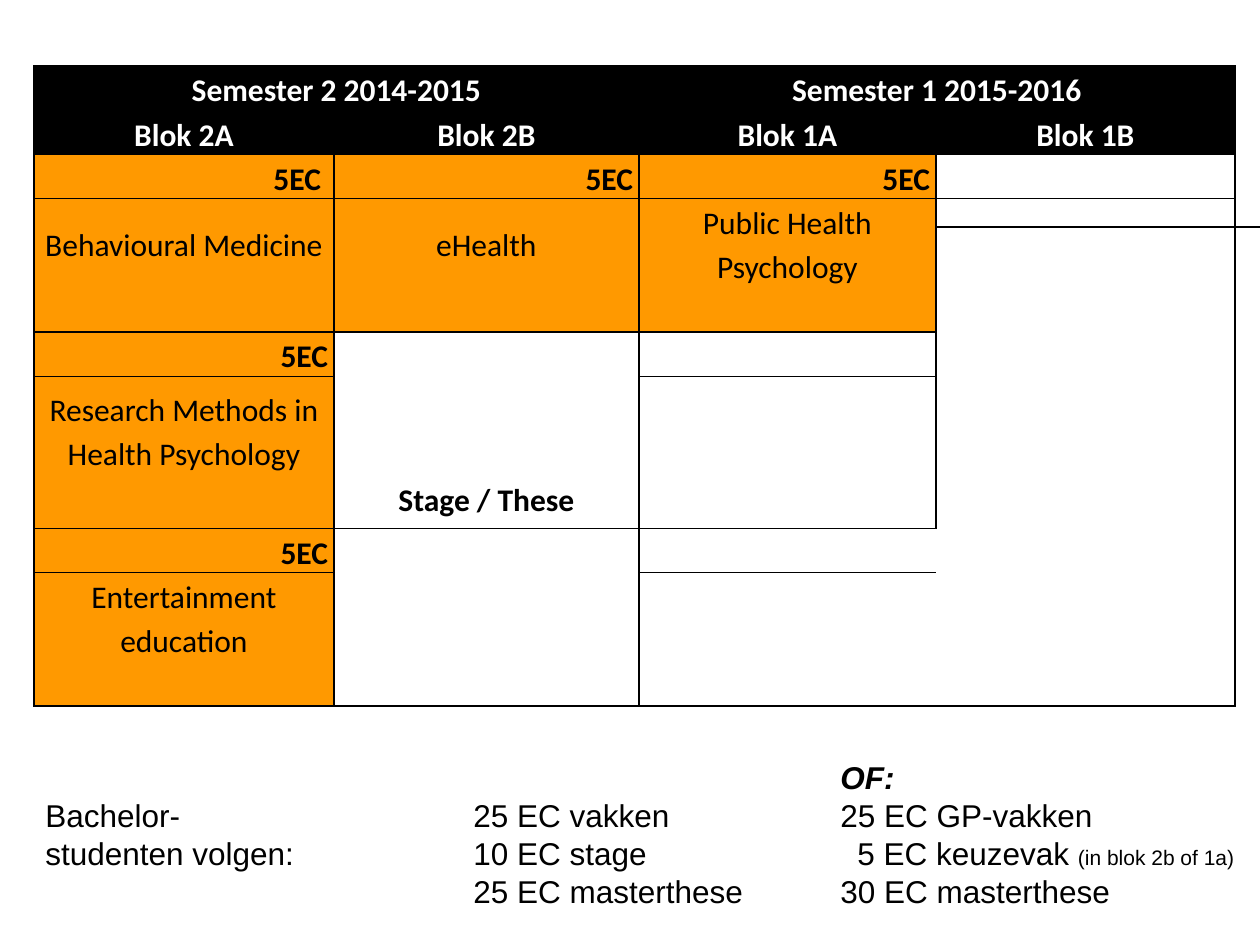
from dataclasses import dataclass

from lxml.etree import SubElement
from pptx import Presentation
from pptx.dml.color import RGBColor
from pptx.enum.shapes import MSO_CONNECTOR as Connector
from pptx.enum.text import MSO_ANCHOR as Anchor, MSO_AUTO_SIZE as AutoSize, PP_ALIGN as Align
from pptx.oxml.ns import qn
from pptx.util import Emu, Pt

PX_PER_INCH = 126
NO_STYLE_NO_GRID = "{2D5ABB26-0587-4C30-8999-92F81FD0307C}"


@dataclass(frozen=True)
class Theme:
    ink: str = "000000"
    paper: str = "FFFFFF"
    course: str = "FF9900"
    table_font: str = "Calibri"
    note_font: str = "Arial"
    body: int = 18
    small: int = 12
    line: int = 1


def px(value):
    return Emu(round(value * 914400 / PX_PER_INCH))


class SlideBuilder:
    def __init__(self, slide, theme):
        self.slide = slide
        self.theme = theme

    def run(self, paragraph, text, font, color=None, size=None, bold=False, italic=False):
        run = paragraph.add_run()
        run.text = text
        run.font.name = font
        run.font.size = Pt(size or self.theme.body)
        run.font.bold = bold
        run.font.italic = italic
        run.font.color.rgb = RGBColor.from_string(color or self.theme.ink)

    def line(self, x1, y1, x2, y2):
        line = self.slide.shapes.add_connector(
            Connector.STRAIGHT, px(x1), px(y1), px(x2), px(y2))
        line.line.color.rgb = RGBColor.from_string(self.theme.ink)
        line.line.width = Pt(self.theme.line)
        SubElement(line._element.spPr, qn("a:effectLst"))

    def table(self, left, top, widths, heights):
        frame = self.slide.shapes.add_table(
            len(heights), len(widths), px(left), px(top), px(sum(widths)), px(sum(heights)))
        table = frame.table
        table._tbl.tblPr.find(qn("a:tableStyleId")).text = NO_STYLE_NO_GRID
        for column, width in zip(table.columns, widths):
            column.width = px(width)
        for row, height in zip(table.rows, heights):
            row.height = px(height)
        for cell in table.iter_cells():
            cell.margin_left = cell.margin_right = px(6)
            cell.margin_top = cell.margin_bottom = 0
        return table

    def block(self, table, row, column, rows=1, columns=1, edges="LRTB", fill=None, merge=False):
        """Outline and fill a block of cells; return its first cell."""
        first = table.cell(row, column)
        if merge:
            first.merge(table.cell(row + rows - 1, column + columns - 1))
        for i in range(rows):
            for j in range(columns):
                cell = table.cell(row + i, column + j)
                on_edge = {"L": j == 0, "R": j == columns - 1,
                           "T": i == 0, "B": i == rows - 1}
                whole = merge and i == j == 0
                for side in edges:
                    if on_edge[side] or whole:
                        self.border(cell, side)
                if fill:
                    cell.fill.solid()
                    cell.fill.fore_color.rgb = RGBColor.from_string(fill)
                else:
                    cell.fill.background()
        return first

    def border(self, cell, side):
        line = SubElement(cell._tc.get_or_add_tcPr(), qn(f"a:ln{side}"),
                          w=str(Pt(self.theme.line)))
        color = SubElement(SubElement(line, qn("a:solidFill")), qn("a:srgbClr"))
        color.set("val", self.theme.ink)

    def cell_text(self, cell, text, align=Align.CENTER, anchor=Anchor.MIDDLE,
                  color=None, bold=True):
        cell.vertical_anchor = anchor
        paragraph = cell.text_frame.paragraphs[0]
        paragraph.alignment = align
        paragraph.line_spacing = 1.15
        self.run(paragraph, text, self.theme.table_font, color, bold=bold)

    def note(self, left, top, width, height, lines):
        """Each line is an indent followed by (text, run options) pairs."""
        box = self.slide.shapes.add_textbox(px(left), px(top), px(width), px(height))
        frame = box.text_frame
        frame.word_wrap = False
        frame.auto_size = AutoSize.SHAPE_TO_FIT_TEXT
        for index, (indent, *runs) in enumerate(lines):
            paragraph = frame.add_paragraph() if index else frame.paragraphs[0]
            if indent:
                paragraph._p.get_or_add_pPr().set("marL", str(px(indent)))
            for text, options in runs:
                self.run(paragraph, text, self.theme.note_font, **options)


def main():
    theme = Theme()
    presentation = Presentation()
    presentation.slide_width, presentation.slide_height = px(1260), px(945)
    slide = presentation.slides.add_slide(presentation.slide_layouts[6])
    builder = SlideBuilder(slide, theme)

    # Rule behind the timetable
    builder.line(149, 227, 1260, 227)

    # Timetable: two header rows, then three rows each for credits, course and space
    heights = [44, 44] + [44, 88, 45] + [44, 107, 45] + [44, 88, 45]
    table = builder.table(34, 66, [300, 305, 297, 299], heights)

    # Header
    for column, semester in ((0, "Semester 2 2014-2015"), (2, "Semester 1 2015-2016")):
        cell = builder.block(table, 0, column, columns=2, fill=theme.ink, merge=True)
        builder.cell_text(cell, semester, anchor=Anchor.BOTTOM, color=theme.paper)
    for column, name in enumerate(("Blok 2A", "Blok 2B", "Blok 1A", "Blok 1B")):
        cell = builder.block(table, 1, column, fill=theme.ink)
        builder.cell_text(cell, name, color=theme.paper)

    # Courses
    courses = [
        (2, 0, "Behavioural Medicine"),
        (2, 1, "eHealth"),
        (2, 2, "Public Health Psychology"),
        (5, 0, "Research Methods in Health Psychology"),
        (8, 0, "Entertainment education"),
    ]
    for row, column, course in courses:
        credit = builder.block(table, row, column, rows=3, fill=theme.course)
        builder.cell_text(credit, "5EC", Align.RIGHT, Anchor.BOTTOM)
        builder.cell_text(table.cell(row + 1, column), course, bold=False)
    table.cell(2, 0).margin_right = px(13)

    # Internship and thesis area
    stage = builder.block(table, 5, 1, rows=3, edges="LRT", merge=True)
    builder.cell_text(stage, "Stage / These", anchor=Anchor.BOTTOM)
    stage.margin_bottom = px(8)
    builder.block(table, 5, 2, rows=3)
    builder.block(table, 8, 1, rows=3, edges="LB", merge=True)
    builder.block(table, 8, 2, rows=3, edges="TB")
    builder.block(table, 2, 3, rows=9, edges="RTB")

    # Study load notes
    builder.note(33, 790, 276, 89, [
        (0, ("Bachelor-", {})),
        (0, ("studenten volgen:", {})),
    ])
    builder.note(461, 790, 297, 127, [
        (0, ("25 EC vakken", {})),
        (0, ("10 EC stage", {})),
        (0, ("25 EC masterthese", {})),
    ])
    builder.note(828, 752, 423, 165, [
        (0, ("OF:", {"bold": True, "italic": True})),
        (0, ("25 EC GP-vakken", {})),
        (17, ("5 EC keuzevak ", {}), ("(in blok 2b of 1a)", {"size": theme.small})),
        (0, ("30 EC masterthese", {})),
    ])

    presentation.save("out.pptx")


if __name__ == "__main__":
    main()
